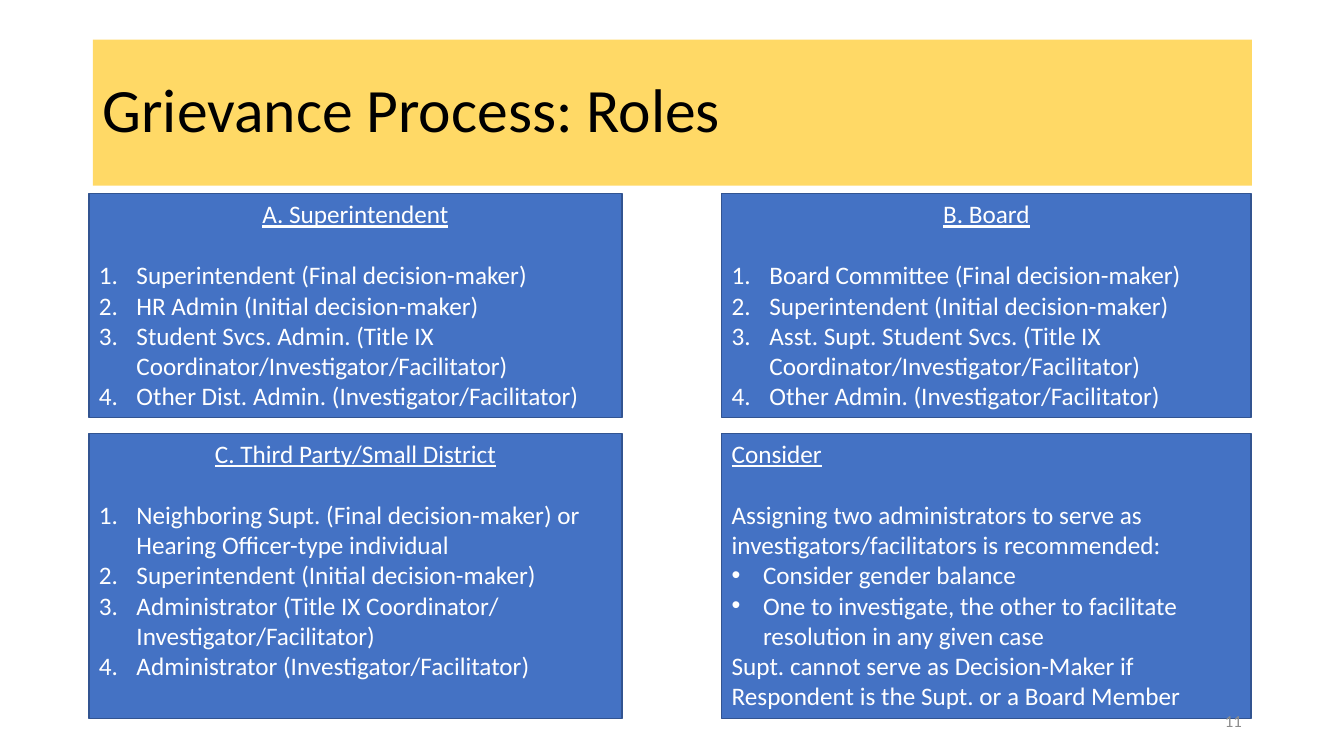
"""Build the slide on roles in the grievance process."""
from lxml import etree
from pptx import Presentation
from pptx.dml.color import RGBColor
from pptx.enum.shapes import MSO_SHAPE
from pptx.enum.text import MSO_ANCHOR, PP_ALIGN
from pptx.oxml.ns import qn
from pptx.util import Cm, Pt

RECTANGLE = MSO_SHAPE.RECTANGLE
TOP, MIDDLE = MSO_ANCHOR.TOP, MSO_ANCHOR.MIDDLE
LEFT, CENTER, RIGHT = PP_ALIGN.LEFT, PP_ALIGN.CENTER, PP_ALIGN.RIGHT

COLORS = {
    "banner": "FFD966",
    "panel": "4472C4",
    "panel_edge": "325491",
    "panel_text": "FFFFFF",
    "title": "000000",
    "page_number": "8C8C8C",
}
FONT = "Calibri"
COLUMNS = [(Cm(2.24), Cm(13.44)), (Cm(18.19), Cm(13.34))]
ROWS = [(Cm(4.88), Cm(5.64)), (Cm(10.92), Cm(7.19))]
INDENTS = {"number": Cm(0.95), "bullet": Cm(0.79)}

PANELS = [
    ("A. Superintendent", CENTER, [
        ("number", "Superintendent (Final decision-maker)"),
        ("number", "HR Admin (Initial decision-maker)"),
        ("number", "Student Svcs. Admin. (Title IX Coordinator/Investigator/Facilitator)"),
        ("number", "Other Dist. Admin. (Investigator/Facilitator)"),
    ]),
    ("B. Board", CENTER, [
        ("number", "Board Committee (Final decision-maker)"),
        ("number", "Superintendent (Initial decision-maker)"),
        ("number", "Asst. Supt. Student Svcs. (Title IX Coordinator/Investigator/Facilitator)"),
        ("number", "Other Admin. (Investigator/Facilitator)"),
    ]),
    ("C. Third Party/Small District", CENTER, [
        ("number", "Neighboring Supt. (Final decision-maker) or Hearing Officer-type individual"),
        ("number", "Superintendent (Initial decision-maker)"),
        ("number", "Administrator (Title IX Coordinator/ Investigator/Facilitator)"),
        ("number", "Administrator (Investigator/Facilitator)"),
    ]),
    ("Consider", LEFT, [
        ("plain", "Assigning two administrators to serve as "
                  "investigators/facilitators is recommended:"),
        ("bullet", "Consider gender balance"),
        ("bullet", "One to investigate, the other to facilitate resolution in any given case"),
        ("plain", "Supt. cannot serve as Decision-Maker if "
                  "Respondent is the Supt. or a Board Member"),
    ]),
]


def write(paragraph, text, size, color, align=LEFT):
    paragraph.text = text
    paragraph.alignment = align
    font = paragraph.runs[0].font
    font.name = FONT
    font.size = Pt(size)
    font.color.rgb = RGBColor.from_string(COLORS[color])
    return font


def add_marker(paragraph, kind):
    properties = paragraph._p.get_or_add_pPr()
    properties.set("marL", str(INDENTS[kind]))
    properties.set("indent", str(-INDENTS[kind]))
    if kind == "number":
        etree.SubElement(properties, qn("a:buFont"), typeface="+mj-lt")
        etree.SubElement(properties, qn("a:buAutoNum"), type="arabicPeriod")
    else:
        etree.SubElement(properties, qn("a:buFont"), typeface="Arial")
        etree.SubElement(properties, qn("a:buChar"), char="•")


def add_block(slide, left, top, width, height, fill, anchor):
    block = slide.shapes.add_shape(RECTANGLE, left, top, width, height)
    block.shadow.inherit = False
    block.fill.solid()
    block.fill.fore_color.rgb = RGBColor.from_string(COLORS[fill])
    block.line.fill.background()
    block.text_frame.word_wrap = True
    block.text_frame.vertical_anchor = anchor
    return block


def add_panel(slide, column, row, heading, heading_align, entries):
    (left, width), (top, height) = column, row
    panel = add_block(slide, left, top, width, height, "panel", TOP)
    panel.line.color.rgb = RGBColor.from_string(COLORS["panel_edge"])
    panel.line.width = Pt(1)
    frame = panel.text_frame
    title = frame.paragraphs[0]
    write(title, heading, 18, "panel_text", heading_align).underline = True
    title.space_after = Pt(22)
    for kind, text in entries:
        entry = frame.add_paragraph()
        write(entry, text, 18, "panel_text")
        if kind in INDENTS:
            add_marker(entry, kind)


def add_banner(slide, text):
    banner = add_block(slide, Cm(2.34), Cm(1), Cm(29.21), Cm(3.68), "banner", MIDDLE)
    title = banner.text_frame.paragraphs[0]
    write(title, text, 44, "title")
    title.line_spacing = 0.9


def add_page_number(slide, number):
    box = slide.shapes.add_textbox(Cm(23.93), Cm(17.65), Cm(7.62), Cm(1.02))
    box.text_frame.word_wrap = True
    box.text_frame.vertical_anchor = MIDDLE
    write(box.text_frame.paragraphs[0], number, 12, "page_number", RIGHT)


def main():
    deck = Presentation()
    deck.slide_width, deck.slide_height = Cm(33.87), Cm(19.05)
    slide = deck.slides.add_slide(deck.slide_layouts[6])
    for index, panel in enumerate(PANELS):
        row, column = divmod(index, len(COLUMNS))
        add_panel(slide, COLUMNS[column], ROWS[row], *panel)
    add_banner(slide, "Grievance Process: Roles")
    add_page_number(slide, "11")
    deck.save("out.pptx")


if __name__ == "__main__":
    main()
